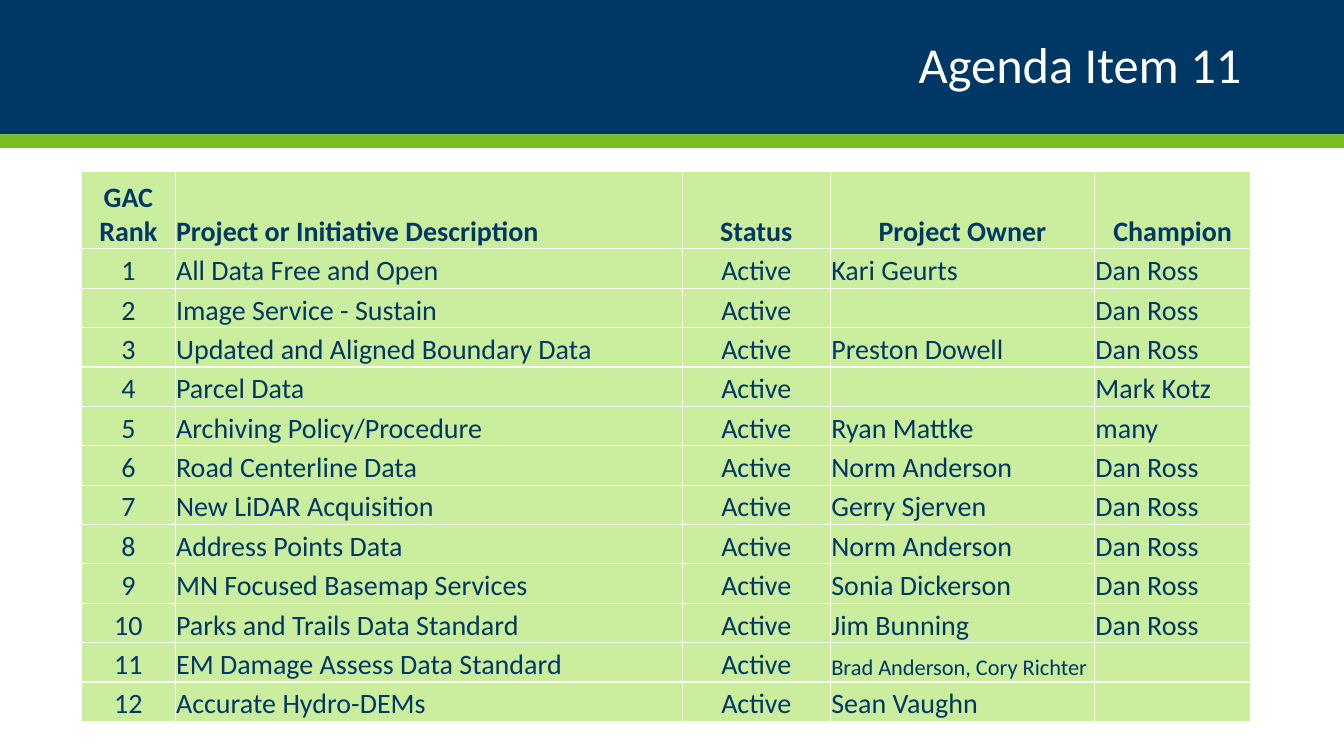
from dataclasses import dataclass

from lxml import etree
from pptx import Presentation
from pptx.dml.color import RGBColor
from pptx.enum import shapes, text
from pptx.oxml import ns
from pptx.util import Pt


@dataclass(frozen=True)
class Theme:
    """Colours, font and type sizes of the slide."""
    navy: str = "003865"
    green: str = "78BE21"
    pale: str = "CAEE9D"
    white: str = "FFFFFF"
    font: str = "Calibri"
    title: int = 36
    body: int = 20
    small: int = 16


THEME = Theme()
LEFT, MID, RIGHT = text.PP_ALIGN.LEFT, text.PP_ALIGN.CENTER, text.PP_ALIGN.RIGHT
WIDE, HIGH = 960, 540
COLS = (66.8, 362.2, 105.9, 188.7, 111.6)
HEAD, ROW = 55.4, 28.14
NAMES = ("GAC Rank", "Project or Initiative Description", "Status",
         "Project Owner", "Champion")
ITEMS = (
    ("All Data Free and Open", "Kari Geurts", "Dan Ross"),
    ("Image Service - Sustain", "", "Dan Ross"),
    ("Updated and Aligned Boundary Data", "Preston Dowell", "Dan Ross"),
    ("Parcel Data", "", "Mark Kotz"),
    ("Archiving Policy/Procedure", "Ryan Mattke", "many"),
    ("Road Centerline Data", "Norm Anderson", "Dan Ross"),
    ("New LiDAR Acquisition", "Gerry Sjerven", "Dan Ross"),
    ("Address Points Data", "Norm Anderson", "Dan Ross"),
    ("MN Focused Basemap Services", "Sonia Dickerson", "Dan Ross"),
    ("Parks and Trails Data Standard", "Jim Bunning", "Dan Ross"),
    ("EM Damage Assess Data Standard", "Brad Anderson, Cory Richter", ""),
    ("Accurate Hydro-DEMs", "Sean Vaughn", ""),
)


def write(frame, words, size=THEME.body, color=THEME.navy, bold=False,
          align=LEFT, space=None):
    """Put one formatted paragraph into a text frame."""
    para = frame.paragraphs[0]
    para.alignment = align
    para.line_spacing = space
    para.font.size = Pt(size)
    if words:
        run = para.add_run()
        run.text = words
        run.font.name = THEME.font
        run.font.size = Pt(size)
        run.font.bold = bold
        run.font.color.rgb = RGBColor.from_string(color)


def band(slide, x, y, w, h, color):
    """Draw a plain filled bar."""
    bar = slide.shapes.add_shape(shapes.MSO_SHAPE.RECTANGLE,
                                 Pt(x), Pt(y), Pt(w), Pt(h))
    bar.shadow.inherit = False
    bar.fill.solid()
    bar.fill.fore_color.rgb = RGBColor.from_string(color)
    bar.line.fill.background()


def header(slide, x, y, w, h, words):
    """Draw the title banner with its green rule below."""
    band(slide, x, y, w, h, THEME.navy)
    band(slide, x, y + h, w, h / 10, THEME.green)
    box = slide.shapes.add_textbox(Pt(x + 66), Pt(y + 12), Pt(w - 132), Pt(h - 24))
    frame = box.text_frame
    frame.word_wrap = True
    frame.vertical_anchor = text.MSO_ANCHOR.MIDDLE
    write(frame, words, size=THEME.title, color=THEME.white, align=RIGHT, space=0.9)


def edge(cell):
    """Give a cell thin white borders."""
    props = cell._tc.get_or_add_tcPr()
    for side in ("lnL", "lnR", "lnT", "lnB"):
        line = etree.SubElement(props, ns.qn(f"a:{side}"), w=str(Pt(1)))
        fill = etree.SubElement(line, ns.qn("a:solidFill"))
        etree.SubElement(fill, ns.qn("a:srgbClr"), val=THEME.white)


def style(cell):
    """Set the borders, fill, insets and anchor of a cell."""
    edge(cell)
    cell.fill.solid()
    cell.fill.fore_color.rgb = RGBColor.from_string(THEME.pale)
    cell.margin_left = cell.margin_right = cell.margin_top = Pt(0.7)
    cell.margin_bottom = 0
    cell.vertical_anchor = text.MSO_ANCHOR.BOTTOM


def projects(slide, x, y):
    """Draw the table of ranked projects."""
    rows = [NAMES] + [(str(rank), name, "Active", owner, champ)
                      for rank, (name, owner, champ) in enumerate(ITEMS, 1)]
    high = HEAD + ROW * len(ITEMS)
    table = slide.shapes.add_table(len(rows), len(COLS), Pt(x), Pt(y),
                                   Pt(sum(COLS)), Pt(high)).table
    table.first_row = table.horz_banding = False
    for col, wide in zip(table.columns, COLS):
        col.width = Pt(wide)
    for r, row in enumerate(rows):
        top = r == 0
        table.rows[r].height = Pt(HEAD if top else ROW)
        for c, words in enumerate(row):
            cell = table.cell(r, c)
            style(cell)
            mid = c in (0, 2) or (top and c > 2)
            write(cell.text_frame, words, bold=top, align=MID if mid else LEFT,
                  size=THEME.small if "," in words else THEME.body)


def main():
    """Build and save the slide."""
    deck = Presentation()
    deck.slide_width, deck.slide_height = Pt(WIDE), Pt(HIGH)
    slide = deck.slides.add_slide(deck.slide_layouts[6])
    header(slide, 0, 0, WIDE, 96, "Agenda Item 11")
    projects(slide, 58.3, 122.4)
    deck.save("out.pptx")


if __name__ == "__main__":
    main()
